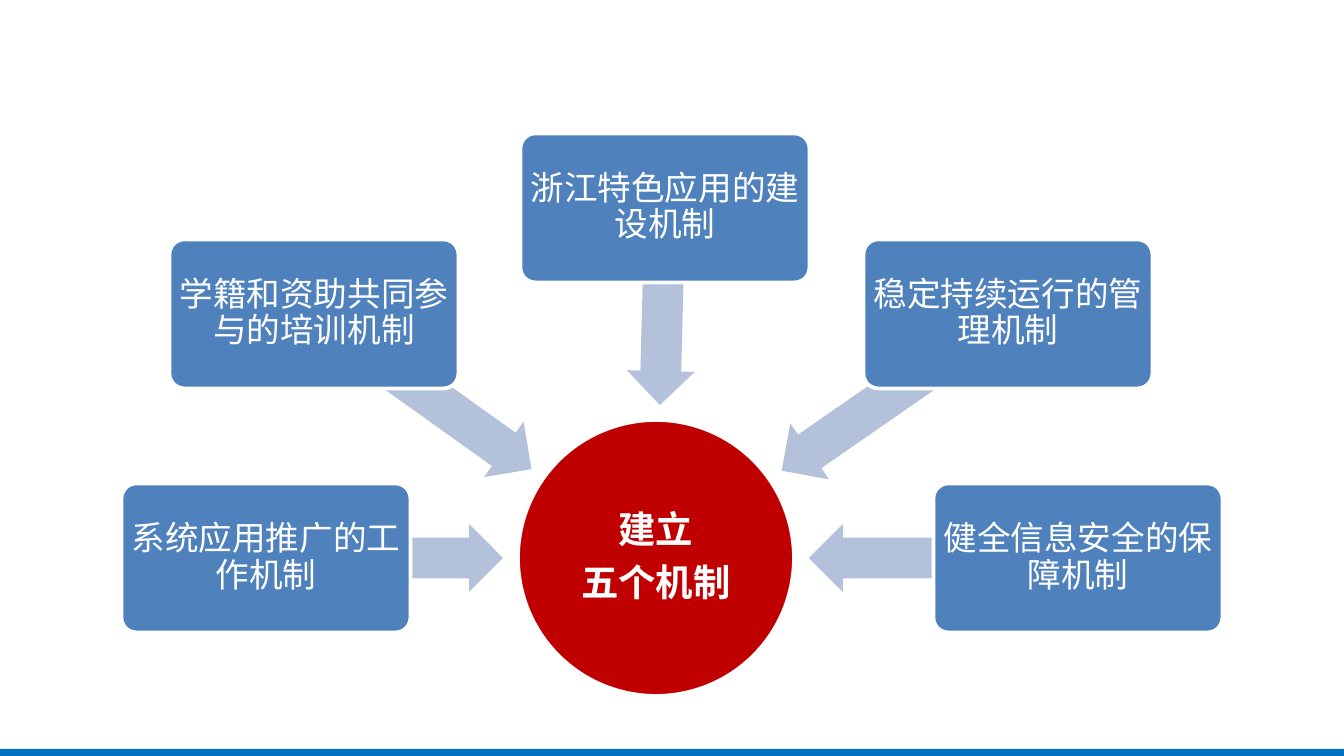
from dataclasses import dataclass
from math import atan2, cos, degrees, hypot, sin

from pptx import Presentation
from pptx.dml.color import RGBColor
from pptx.enum.shapes import MSO_SHAPE
from pptx.enum.text import MSO_ANCHOR, PP_ALIGN
from pptx.util import Pt

EMU_PER_PX = 914400 / 134.4
SLIDE_W, SLIDE_H = 1344, 756
BAR_TOP = 749
HUB_X, HUB_Y, HUB_SIZE = 656, 558, 276
BOX_W, BOX_H = 289, 149
ARROW_H = 68
TIP_DISTANCE = 153  # from the hub's centre to each arrow tip

HUB_LINES = ["建立", "五个机制"]
# Centre x, centre y, wording
MECHANISMS = [
    (266, 558, "系统应用推广的工作机制"),
    (314, 314, "学籍和资助共同参与的培训机制"),
    (665, 208, "浙江特色应用的建设机制"),
    (1008, 314, "稳定持续运行的管理机制"),
    (1078, 558, "健全信息安全的保障机制"),
]


@dataclass(frozen=True)
class Theme:
    font: str = "Arial"
    white: str = "FFFFFF"
    hub: str = "C00000"
    box: str = "4F81BD"
    arrow: str = "B3C1DB"
    bar: str = "0070C0"
    hub_size: int = 20
    box_size: int = 18
    outline: int = 2


THEME = Theme()


def px(n):
    return round(n * EMU_PER_PX)


def add_centred(s, kind, cx, cy, w, h, fill, outlined=False):
    """Add a preset shape placed by its centre."""
    sp = s.shapes.add_shape(kind, px(cx - w / 2), px(cy - h / 2), px(w), px(h))
    sp.shadow.inherit = False
    sp.fill.solid()
    sp.fill.fore_color.rgb = RGBColor.from_string(fill)
    if outlined:
        sp.line.color.rgb = RGBColor.from_string(THEME.white)
        sp.line.width = Pt(THEME.outline)
    else:
        sp.line.fill.background()
    return sp


def write_lines(sp, lines, size, inset, bold=False):
    tf = sp.text_frame
    tf.word_wrap = True
    tf.vertical_anchor = MSO_ANCHOR.MIDDLE
    tf.margin_left = tf.margin_right = tf.margin_top = tf.margin_bottom = px(inset)
    for i, line in enumerate(lines):
        p = tf.add_paragraph() if i else tf.paragraphs[0]
        p.alignment = PP_ALIGN.CENTER
        p.line_spacing = 0.9
        p.space_after = Pt(round(size * 0.35))
        r = p.add_run()
        r.text = line
        r.font.name = THEME.font
        r.font.size = Pt(size)
        r.font.bold = bold
        r.font.color.rgb = RGBColor.from_string(THEME.white)


def add_arrow(s, box_x, box_y):
    """Add a block arrow from a box's centre towards the hub."""
    dx, dy = box_x - HUB_X, box_y - HUB_Y
    angle, distance = atan2(dy, dx), hypot(dx, dy)
    middle = (distance + TIP_DISTANCE) / 2
    sp = add_centred(s, MSO_SHAPE.LEFT_ARROW,
                     HUB_X + middle * cos(angle), HUB_Y + middle * sin(angle),
                     distance - TIP_DISTANCE, ARROW_H, THEME.arrow)
    sp.adjustments[0] = 0.6
    sp.adjustments[1] = 0.5
    sp.rotation = degrees(angle) % 360


def add_box(s, cx, cy, text):
    sp = add_centred(s, MSO_SHAPE.ROUNDED_RECTANGLE, cx, cy, BOX_W, BOX_H,
                     THEME.box, outlined=True)
    sp.adjustments[0] = 0.1
    write_lines(sp, [text], THEME.box_size, inset=5)


def add_hub(s):
    sp = add_centred(s, MSO_SHAPE.OVAL, HUB_X, HUB_Y, HUB_SIZE, HUB_SIZE,
                     THEME.hub, outlined=True)
    write_lines(sp, HUB_LINES, THEME.hub_size, inset=2, bold=True)


def add_bottom_bar(s):
    add_centred(s, MSO_SHAPE.RECTANGLE, SLIDE_W / 2, (BAR_TOP + SLIDE_H) / 2,
                SLIDE_W, SLIDE_H - BAR_TOP, THEME.bar)


def main():
    prs = Presentation()
    prs.slide_width, prs.slide_height = px(SLIDE_W), px(SLIDE_H)
    s = prs.slides.add_slide(prs.slide_layouts[6])
    add_bottom_bar(s)
    add_hub(s)
    for cx, cy, text in MECHANISMS:
        add_arrow(s, cx, cy)
        add_box(s, cx, cy, text)
    prs.save("out.pptx")


if __name__ == "__main__":
    main()
